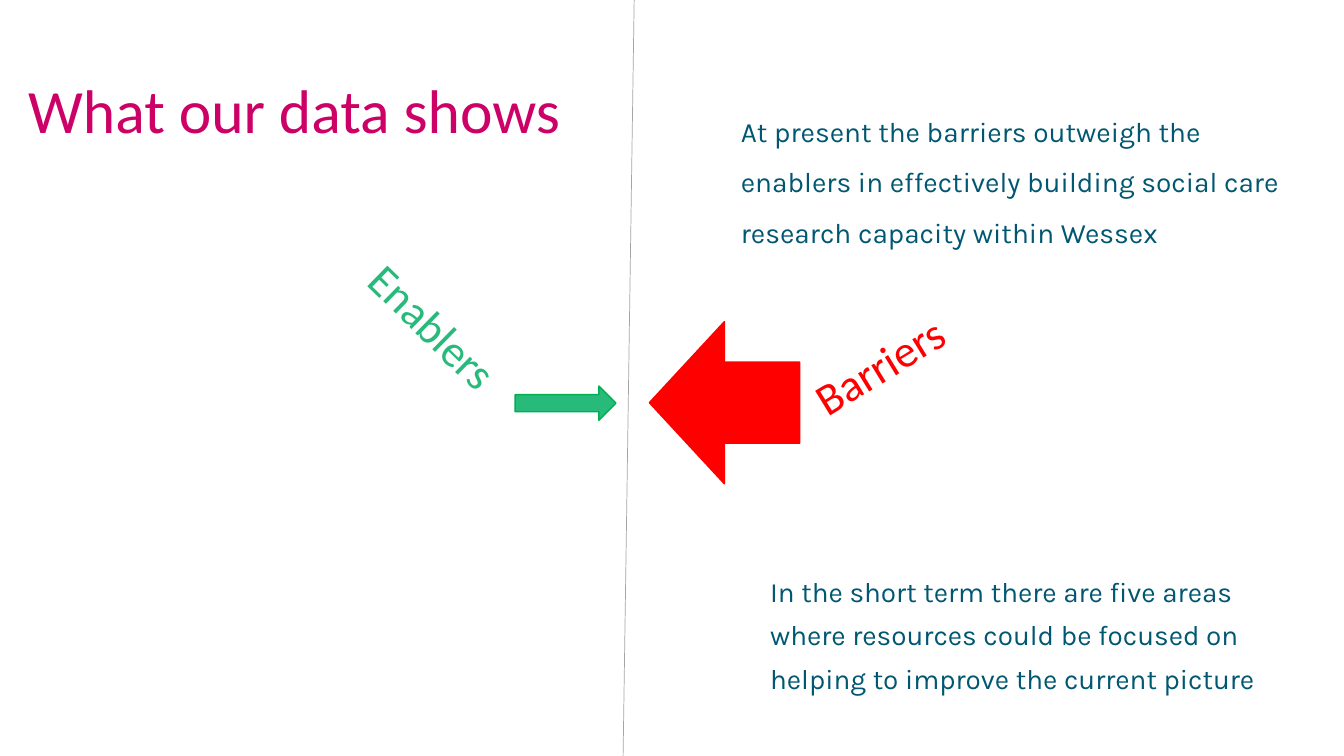
import pptx
import pptx.dml.color
import pptx.enum.shapes
import pptx.enum.text
import pptx.oxml.ns
import pptx.util
from dataclasses import dataclass
from lxml import etree

Inches = pptx.util.Inches
Pt = pptx.util.Pt
SHAPES = pptx.enum.shapes.MSO_SHAPE
ANCHOR = pptx.enum.text.MSO_ANCHOR


@dataclass(frozen=True)
class Theme:
    heading_font: str = "Calibri"
    body_font: str = "Karla"
    title: str = "CC0066"
    body: str = "005772"
    enabler: str = "28BA7B"
    enabler_edge: str = "00B050"
    barrier: str = "FF0000"
    divider: str = "A5A5A5"
    title_size: float = 44
    label_size: float = 32
    body_size: float = 20
    closing_size: float = 19.9


THEME = Theme()


def rgb(value):
    return pptx.dml.color.RGBColor.from_string(value)


def set_all(obj, values):
    for name, value in values.items():
        setattr(obj, name, value)


def place(s, left, top, width, height):
    set_all(s, {"left": Inches(left), "top": Inches(top),
                "width": Inches(width), "height": Inches(height)})


def write(s, text, font, size, color, anchor, spacing):
    tf = s.text_frame
    set_all(tf, {"word_wrap": True, "vertical_anchor": anchor,
                 "auto_size": pptx.enum.text.MSO_AUTO_SIZE.NONE})
    p = tf.paragraphs[0]
    set_all(p, {"alignment": pptx.enum.text.PP_ALIGN.LEFT, "line_spacing": spacing})
    r = p.add_run()
    r.text = text
    set_all(r.font, {"name": font, "size": Pt(size)})
    r.font.color.rgb = rgb(color)
    return p


def add_title(slide, text):
    s = slide.shapes.title
    place(s, 0.18, 0.4, 11.5, 1.45)
    write(s, text, THEME.heading_font, THEME.title_size, THEME.title, ANCHOR.MIDDLE, 0.9)


def add_label(slide, text, box, rotation, color):
    s = slide.shapes.add_textbox(*map(Inches, box))
    s.rotation = rotation
    write(s, text, THEME.heading_font, THEME.label_size, color, ANCHOR.MIDDLE, 0.9)


def add_statement(slide, text, box, size, spacing):
    s = slide.shapes.add_textbox(*map(Inches, box))
    p = write(s, text, THEME.body_font, size, THEME.body, ANCHOR.TOP, spacing)
    set_all(p, {"level": 1, "space_after": Pt(12)})
    # Indent the whole paragraph
    pPr = p._p.get_or_add_pPr()
    pPr.set("marL", str(Inches(0.5)))
    pPr.set("indent", "0")


def add_arrow(slide, kind, box, fill, edge):
    s = slide.shapes.add_shape(kind, *map(Inches, box))
    s.shadow.inherit = False
    s.fill.solid()
    s.fill.fore_color.rgb = rgb(fill)
    s.line.color.rgb = rgb(edge)
    s.line.width = Pt(1)


def add_divider(slide, *ends):
    s = slide.shapes.add_connector(pptx.enum.shapes.MSO_CONNECTOR.STRAIGHT,
                                   *map(Inches, ends))
    s.line.color.rgb = rgb(THEME.divider)
    s.line.width = Pt(0.5)
    etree.SubElement(s._element.spPr, pptx.oxml.ns.qn("a:effectLst"))


def main():
    prs = pptx.Presentation()
    set_all(prs, {"slide_width": Inches(13.33), "slide_height": Inches(7.5)})
    slide = prs.slides.add_slide(prs.slide_layouts[5])

    # Heading and dividing line
    add_title(slide, "What our data shows")
    add_divider(slide, 6.29, 0, 6.18, 7.5)

    # Opposing forces
    add_label(slide, "Barriers", (7.83, 2.78, 2.98, 1.02), 328.5, THEME.barrier)
    add_label(slide, "Enablers", (3.3, 2.8, 2.5, 1.45), 44.3, THEME.enabler)
    add_arrow(slide, SHAPES.RIGHT_ARROW, (5.11, 3.83, 1, 0.34),
              THEME.enabler, THEME.enabler_edge)
    add_arrow(slide, SHAPES.LEFT_ARROW, (6.44, 3.19, 1.49, 1.61),
              THEME.barrier, THEME.barrier)

    # Statements
    add_statement(slide, "At present the barriers outweigh the enablers in effectively "
                  "building social care research capacity within Wessex",
                  (6.75, 0.92, 6.14, 1.45), THEME.body_size, 1.5)
    add_statement(slide, "In the short term there are five areas where resources could be "
                  "focused on helping to improve the current picture",
                  (7.04, 5.55, 5.73, 1.72), THEME.closing_size, 1.3)

    prs.save("out.pptx")


if __name__ == "__main__":
    main()
